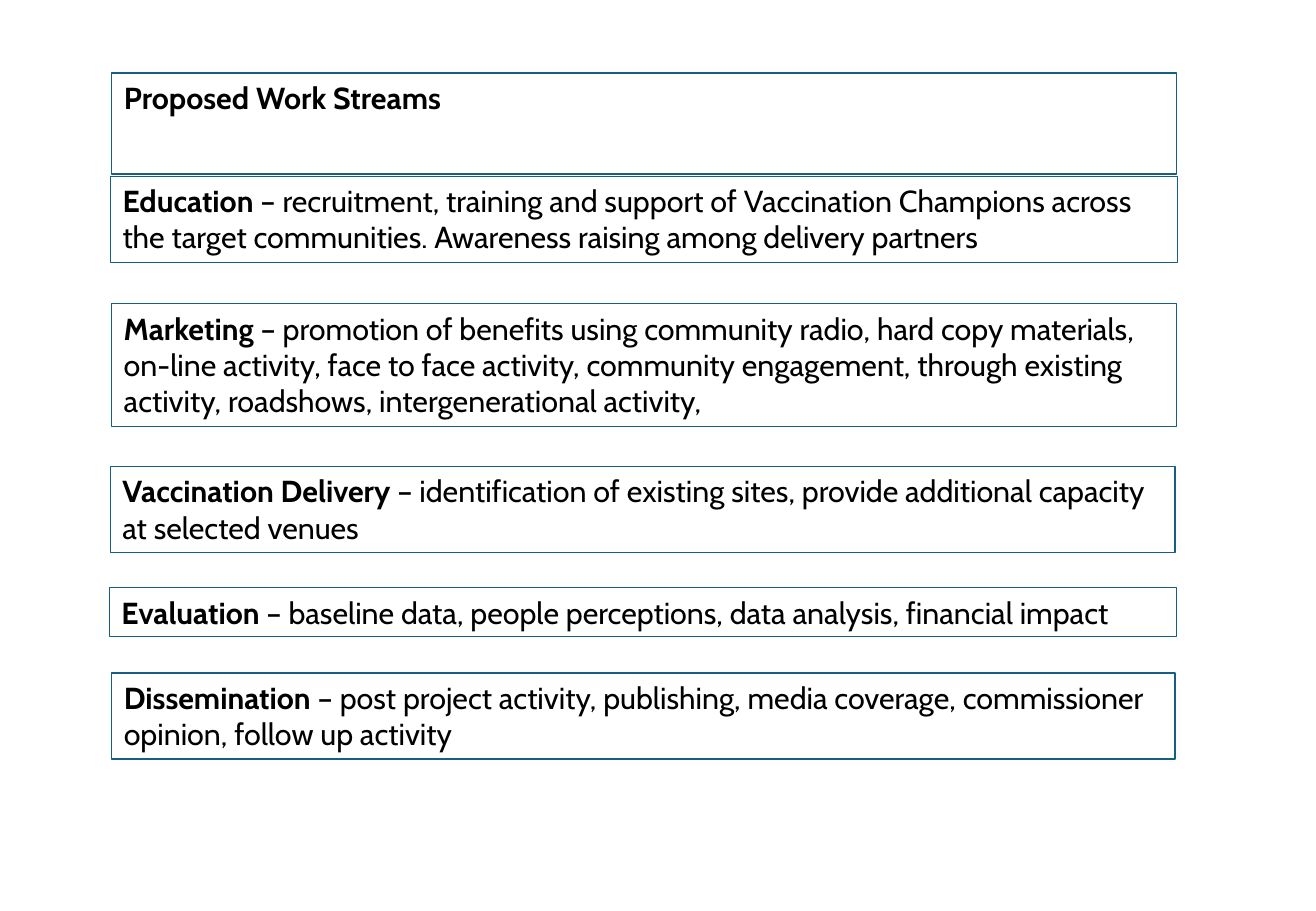
import pptx
import pptx.dml.color
import pptx.enum.text
import pptx.util

Inches = pptx.util.Inches
Pt = pptx.util.Pt
RGBColor = pptx.dml.color.RGBColor

BORDER = RGBColor(0x15, 0x60, 0x82)
INK = RGBColor(0x00, 0x00, 0x00)
FONT = "Cabin"

TITLE = ("Proposed Work Streams", "", (0.92, 0.6, 8.76, 0.4))
STREAMS = [
    ("Education",
     " – recruitment, training and support of Vaccination Champions across "
     "the target communities. Awareness raising among delivery partners",
     (0.91, 1.45, 8.78, 0.71)),
    ("Marketing",
     " – promotion of benefits using community radio, hard copy materials, "
     "on-line activity, face to face activity, community engagement, through "
     "existing activity, roadshows, intergenerational activity,",
     (0.92, 2.5, 8.76, 1.01)),
    ("Vaccination Delivery",
     " – identification of existing sites, provide additional capacity "
     "at selected venues",
     (0.91, 3.84, 8.76, 0.71)),
    ("Evaluation",
     " – baseline data, people perceptions, data analysis, financial impact",
     (0.9, 4.84, 8.78, 0.4)),
    ("Dissemination",
     " – post project activity, publishing, media coverage, commissioner "
     "opinion, follow up activity",
     (0.92, 5.54, 8.75, 0.71)),
]


def fill_box(box, name, details, place):
    """Place a bordered box and write its bold name and plain details."""
    box.left, box.top, box.width, box.height = map(Inches, place)
    box.line.color.rgb = BORDER
    box.line.width = Pt(0.75)
    frame = box.text_frame
    frame.word_wrap = True
    frame.auto_size = pptx.enum.text.MSO_AUTO_SIZE.SHAPE_TO_FIT_TEXT
    frame.vertical_anchor = pptx.enum.text.MSO_ANCHOR.TOP
    para = frame.paragraphs[0]
    para.alignment = pptx.enum.text.PP_ALIGN.LEFT
    para.font.name = FONT
    para.font.size = Pt(18)
    para.font.color.rgb = INK
    for text, bold in ((name, True), (details, False)):
        if text:
            span = para.add_run()
            span.text = text
            span.font.bold = bold


def main():
    """Build the work streams slide and save it."""
    deck = pptx.Presentation()
    deck.slide_width = Inches(10.83)
    deck.slide_height = Inches(7.5)
    page = deck.slides.add_slide(deck.slide_layouts.get_by_name("Title Only"))
    fill_box(page.shapes.title, *TITLE)
    for name, details, place in STREAMS:
        box = page.shapes.add_textbox(*map(Inches, place))
        fill_box(box, name, details, place)
    deck.save("out.pptx")


if __name__ == "__main__":
    main()
